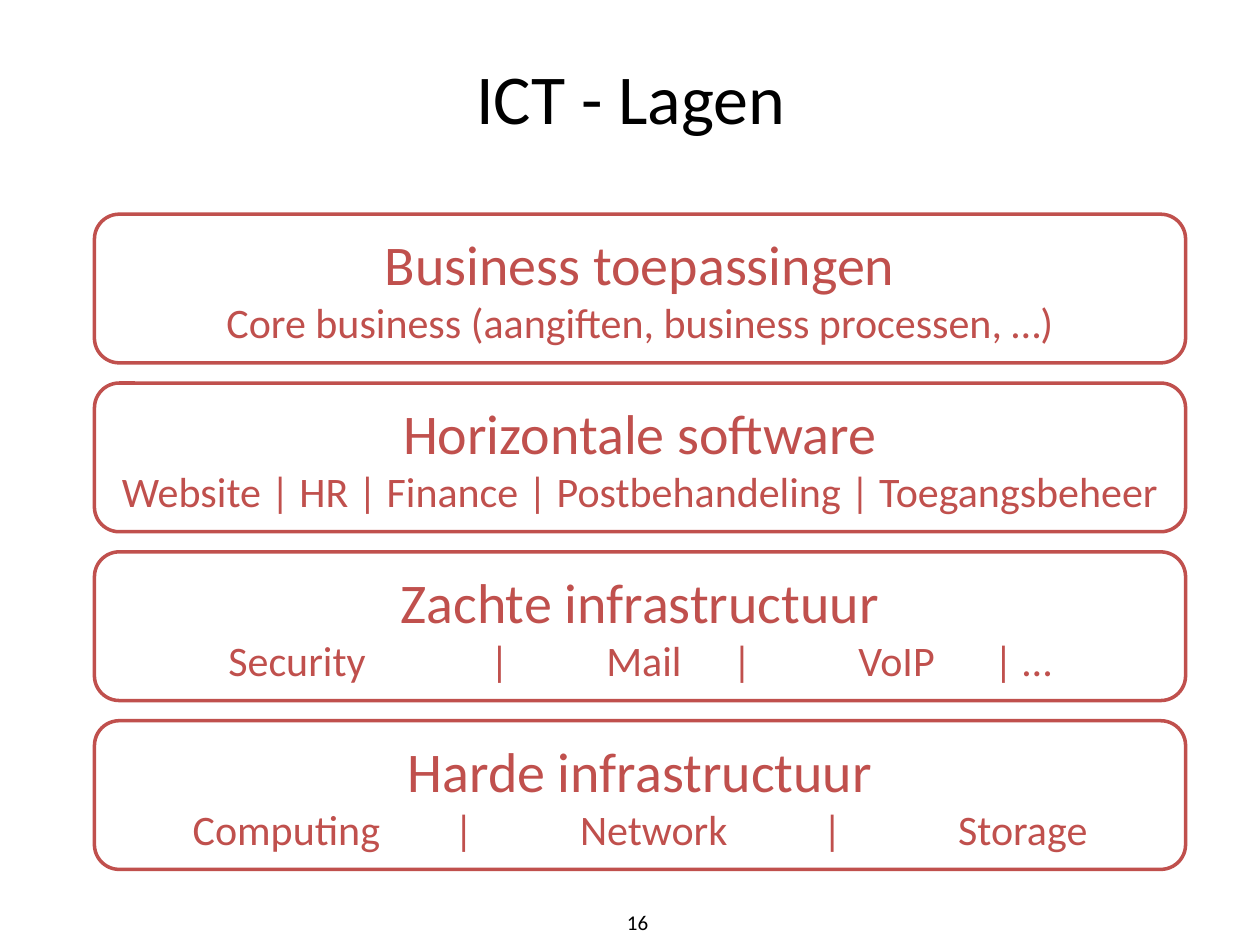
from lxml import etree
from pptx import Presentation
from pptx.dml.color import RGBColor
from pptx.enum.shapes import MSO_SHAPE
from pptx.enum.text import MSO_ANCHOR, PP_ALIGN
from pptx.oxml.ns import qn
from pptx.util import Inches, Pt

CENTER = PP_ALIGN.CENTER
MIDDLE = MSO_ANCHOR.MIDDLE
ROUNDED = MSO_SHAPE.ROUNDED_RECTANGLE

TITLE = "ICT - Lagen"
PAGE = "16"
LAYERS = [
    ("Business toepassingen", "Core business (aangiften, business processen, …)"),
    ("Horizontale software", "Website | HR | Finance | Postbehandeling | Toegangsbeheer"),
    ("Zachte infrastructuur", "Security\t |\tMail\t|\tVoIP\t | …"),
    ("Harde infrastructuur", "Computing\t |\t Network \t|\t Storage"),
]
COLORS = {"text": "000000", "layer": "C0504D", "fill": "FFFFFF"}
FONT = "Calibri"
LEFT, TOP, WIDTH, HEIGHT, PITCH = 0.75, 1.7, 8.66, 1.18, 1.34
TAB_COUNT = 8


def rgb(name):
    return RGBColor.from_string(COLORS[name])


def add_tabs(p):
    tabs = etree.SubElement(p._p.get_or_add_pPr(), qn("a:tabLst"))
    for i in range(1, TAB_COUNT + 1):
        etree.SubElement(tabs, qn("a:tab"), pos=str(Inches(i)), algn="l")


def write(sp, lines, color):
    tf = sp.text_frame
    tf.word_wrap = True
    tf.vertical_anchor = MIDDLE
    for i, (text, size) in enumerate(lines):
        p = tf.add_paragraph() if i else tf.paragraphs[0]
        p.text = text
        p.alignment = CENTER
        if "\t" in text:
            add_tabs(p)
        for r in p.runs:
            r.font.name = FONT
            r.font.size = Pt(size)
            r.font.color.rgb = rgb(color)


def add_layer(slide, row, heading, detail):
    sp = slide.shapes.add_shape(ROUNDED, Inches(LEFT), Inches(TOP + row * PITCH),
                                Inches(WIDTH), Inches(HEIGHT))
    sp.shadow.inherit = False
    sp.fill.solid()
    sp.fill.fore_color.rgb = rgb("fill")
    sp.line.color.rgb = rgb("layer")
    sp.line.width = Pt(2)
    write(sp, [(heading, 32), (detail, 24)], "layer")


def main():
    prs = Presentation()
    prs.slide_width, prs.slide_height = Inches(10), Inches(7.5)
    slide = prs.slides.add_slide(prs.slide_layouts[5])

    title = slide.shapes.title
    title.left, title.top = Inches(0.28), Inches(0.14)
    title.width, title.height = Inches(9.45), Inches(1.25)
    write(title, [(TITLE, 40)], "text")

    number = slide.shapes.add_textbox(Inches(4.65), Inches(7.14), Inches(0.82), Inches(0.36))
    write(number, [(PAGE, 12)], "text")

    for row, (heading, detail) in enumerate(LAYERS):
        add_layer(slide, row, heading, detail)

    prs.save("out.pptx")


if __name__ == "__main__":
    main()
